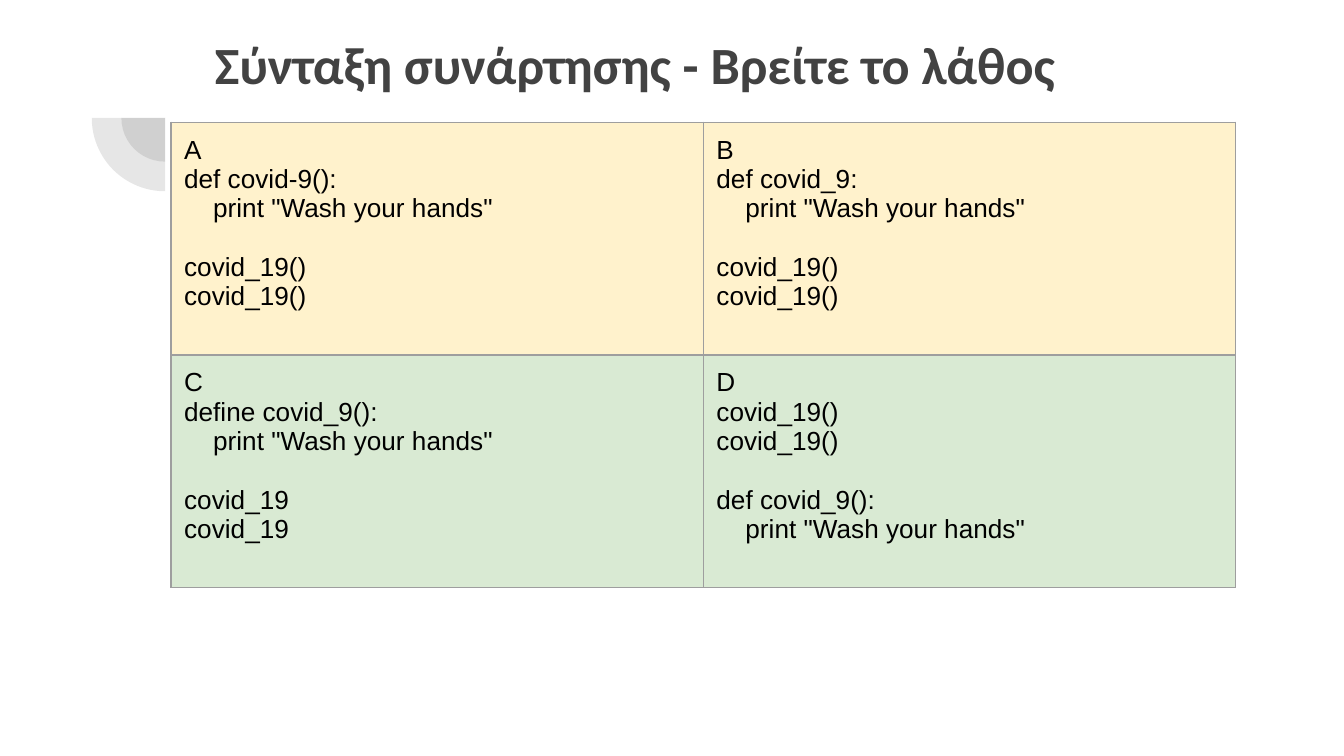
from lxml import etree
from pptx import Presentation
from pptx.dml.color import RGBColor
from pptx.enum.shapes import MSO_SHAPE
from pptx.enum.text import MSO_ANCHOR
from pptx.oxml.ns import qn
from pptx.util import Cm, Pt

PIE = MSO_SHAPE.PIE
TOP = MSO_ANCHOR.TOP

TITLE = "Σύνταξη συνάρτησης - Βρείτε το λάθος"
PRINT_LINE = '    print "Wash your hands"'
CALLS = ["covid_19()", "covid_19()"]
QUESTIONS = [
    [
        (["Α", "def covid-9():", PRINT_LINE], CALLS),
        (["Β", "def covid_9:", PRINT_LINE], CALLS),
    ],
    [
        (["C", "define covid_9():", PRINT_LINE], ["covid_19", "covid_19"]),
        (["D", *CALLS], ["def covid_9():", PRINT_LINE]),
    ],
]

THEME = {
    "title": {"name": "Calibri", "size": Pt(28), "bold": True, "color": "424242"},
    "code": {"name": "Arial", "size": Pt(14), "bold": False, "color": "000000"},
    "row_fills": ["FFF2CC", "D9EAD3"],
    "border": "9E9E9E",
    "pie": "424242",
    "pie_alpha": 13,
}
INSET = Cm(0.25)
INSETS = {f"margin_{side}": INSET for side in ("left", "right", "top", "bottom")}
BLOCK_GAP = Pt(15.7)
PIE_CENTER = (3.12, 2.23)
PIE_DIAMETERS = [1.65, 2.77]
COLUMN_WIDTH, ROW_HEIGHT = Cm(10.06), Cm(4.4)


def apply(target, values):
    for name, value in values.items():
        setattr(target, name, value)


def write(para, text, style):
    span = para.add_run()
    span.text = text
    apply(span.font, {key: style[key] for key in ("name", "size", "bold")})
    span.font.color.rgb = RGBColor.from_string(style["color"])


def add_pie(page, diameter):
    left, top = (Cm(center - diameter / 2) for center in PIE_CENTER)
    pie = page.shapes.add_shape(PIE, left, top, Cm(diameter), Cm(diameter))
    pie.adjustments[0], pie.adjustments[1] = 108, 162
    pie.rotation = 270
    pie.shadow.inherit = False
    pie.line.fill.background()
    pie.fill.solid()
    pie.fill.fore_color.rgb = RGBColor.from_string(THEME["pie"])
    color = pie.fill._xPr.find(f".//{qn('a:srgbClr')}")
    etree.SubElement(color, qn("a:alpha"), val=str(THEME["pie_alpha"] * 1000))


def add_title(page):
    box = page.shapes.add_textbox(Cm(3.81), Cm(0.36), Cm(19.53), Cm(2.77))
    frame = box.text_frame
    apply(frame, {"word_wrap": True, "vertical_anchor": TOP, **INSETS})
    write(frame.paragraphs[0], TITLE, THEME["title"])


def add_borders(cell):
    properties = cell._tc.get_or_add_tcPr()
    for index, side in enumerate(("lnL", "lnR", "lnT", "lnB")):
        line = etree.Element(qn(f"a:{side}"), w=str(Pt(0.75)))
        fill = etree.SubElement(line, qn("a:solidFill"))
        etree.SubElement(fill, qn("a:srgbClr"), val=THEME["border"])
        properties.insert(index, line)


def fill_cell(cell, blocks, fill):
    apply(cell, {"vertical_anchor": TOP, **INSETS})
    cell.fill.solid()
    cell.fill.fore_color.rgb = RGBColor.from_string(fill)
    add_borders(cell)
    frame = cell.text_frame
    for block_index, block in enumerate(blocks):
        for line_index, text in enumerate(block):
            first_line = block_index == line_index == 0
            para = frame.paragraphs[0] if first_line else frame.add_paragraph()
            if block_index and line_index == 0:
                para.space_before = BLOCK_GAP
            write(para, text, THEME["code"])


def add_questions(page):
    rows, columns = len(QUESTIONS), len(QUESTIONS[0])
    table = page.shapes.add_table(
        rows, columns, Cm(3.23), Cm(2.31), COLUMN_WIDTH * columns, ROW_HEIGHT * rows
    ).table
    apply(table, {"first_row": False, "horz_banding": False})
    for row, questions in enumerate(QUESTIONS):
        for column, blocks in enumerate(questions):
            fill_cell(table.cell(row, column), blocks, THEME["row_fills"][row])


def main():
    deck = Presentation()
    apply(deck, {"slide_width": Cm(25.4), "slide_height": Cm(14.29)})
    page = deck.slides.add_slide(deck.slide_layouts[6])
    for diameter in PIE_DIAMETERS:
        add_pie(page, diameter)
    add_title(page)
    add_questions(page)
    deck.save("out.pptx")


if __name__ == "__main__":
    main()
